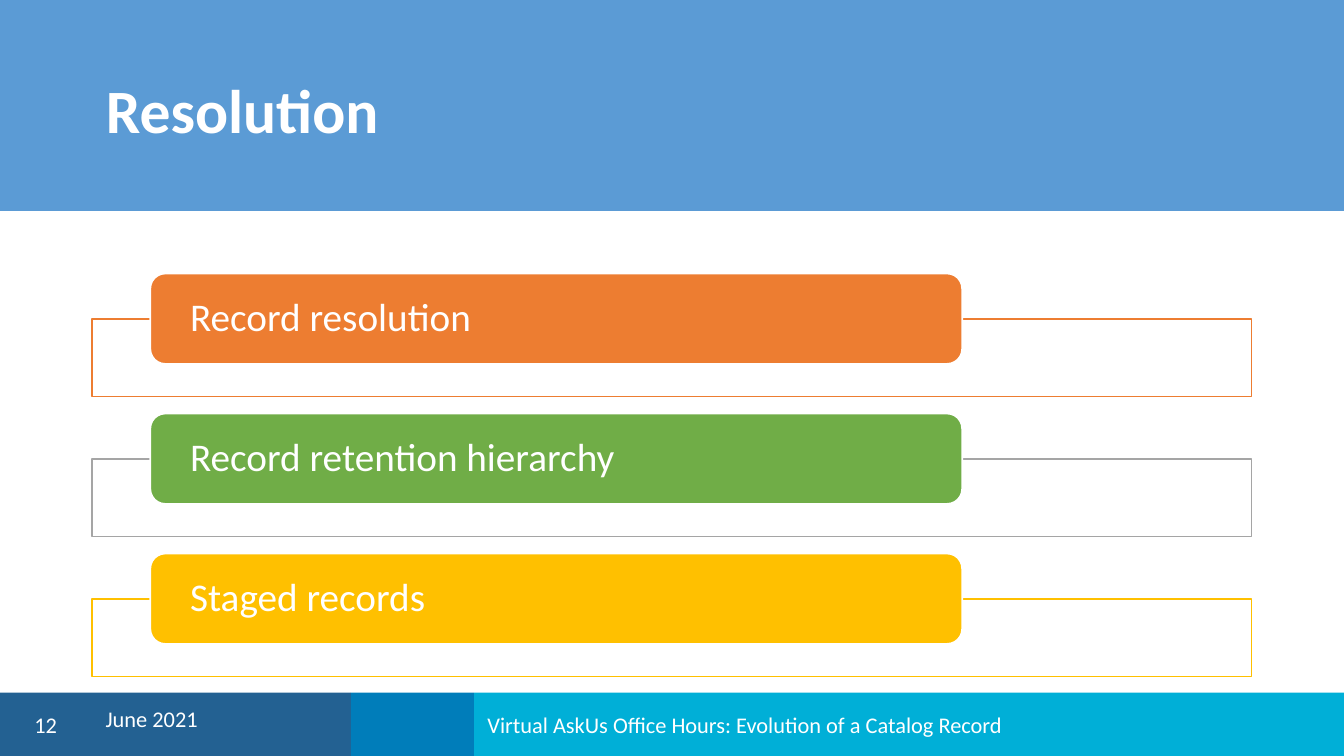
from lxml import etree
from pptx import Presentation
from pptx.dml.color import RGBColor
from pptx.enum import shapes, text
from pptx.oxml import ns
from pptx.util import Pt

RECT = shapes.MSO_SHAPE.RECTANGLE
ROUND = shapes.MSO_SHAPE.ROUNDED_RECTANGLE

prs = Presentation()
prs.slide_width, prs.slide_height = Pt(720), Pt(405)
s = prs.slides.add_slide(prs.slide_layouts[5])


def add_box(kind, box, fill, line=None):
    sp = s.shapes.add_shape(kind, *[Pt(v) for v in box])
    sp.shadow.inherit = False
    sp.fill.solid()
    sp.fill.fore_color.rgb = RGBColor.from_string(fill)
    if line:
        sp.line.color.rgb = RGBColor.from_string(line)
        sp.line.width = Pt(1)
    else:
        sp.line.fill.background()
    return sp


def write(sp, words, size, align=text.PP_ALIGN.LEFT, spacing=0.9, bold=False):
    tf = sp.text_frame
    tf.word_wrap = True
    tf.auto_size = text.MSO_AUTO_SIZE.NONE
    tf.vertical_anchor = text.MSO_ANCHOR.MIDDLE
    p = tf.paragraphs[0]
    p.alignment = align
    p.line_spacing = spacing
    r = p.add_run()
    r.text = words
    fmt = {"name": "Calibri", "size": Pt(size), "bold": bold}
    for key, value in fmt.items():
        setattr(r.font, key, value)
    r.font.color.rgb = RGBColor.from_string("FFFFFF")


# Footer bands
left = 0
for width, color in [(188, "236192"), (66, "007DBA"), (466, "00AFD7")]:
    add_box(RECT, (left, 371, width, 34), color)
    left += width

# Title on its banner
add_box(RECT, (0, 0, 720, 113), "5B9BD5")
title = s.shapes.title
place = {"left": 49.5, "top": 21.5, "width": 621, "height": 78.5}
for key, value in place.items():
    setattr(title, key, Pt(value))
s.shapes.element.append(title.element)  # bring in front of the banner
write(title, "Resolution", 33, bold=True)

# Topic cards, each over an outlined frame
cards = [
    ("Record resolution", "ED7D31", "ED7D31"),
    ("Record retention hierarchy", "70AD47", "A5A5A5"),
    ("Staged records", "FFC000", "FFC000"),
]
for i, (words, color, outline) in enumerate(cards):
    top = 146.5 + 75 * i
    frame = add_box(RECT, (49.5, top + 24.5, 621, 41.5), "FFFFFF", outline)
    rgb = frame.fill._xPr.find(".//" + ns.qn("a:srgbClr"))
    etree.SubElement(rgb, ns.qn("a:alpha"), val="90000")
    card = add_box(ROUND, (80.5, top, 435, 48.5), color, "FFFFFF")
    tf = card.text_frame
    tf.margin_left = tf.margin_right = Pt(19)
    tf.margin_top = tf.margin_bottom = 0
    write(card, words, 21)

# Footer texts
footers = [
    ("June 2021", (49.5, 375, 162, 21.5), text.PP_ALIGN.LEFT, 0.9),
    ("Virtual AskUs Office Hours: Evolution of a Catalog Record",
     (254, 377.5, 384.5, 21.5), text.PP_ALIGN.LEFT, 1.0),
    ("12", (8.5, 377.5, 32, 21.5), text.PP_ALIGN.CENTER, 1.0),
]
for words, box, align, spacing in footers:
    sp = s.shapes.add_textbox(*[Pt(v) for v in box])
    write(sp, words, 12, align, spacing)

prs.save("out.pptx")
